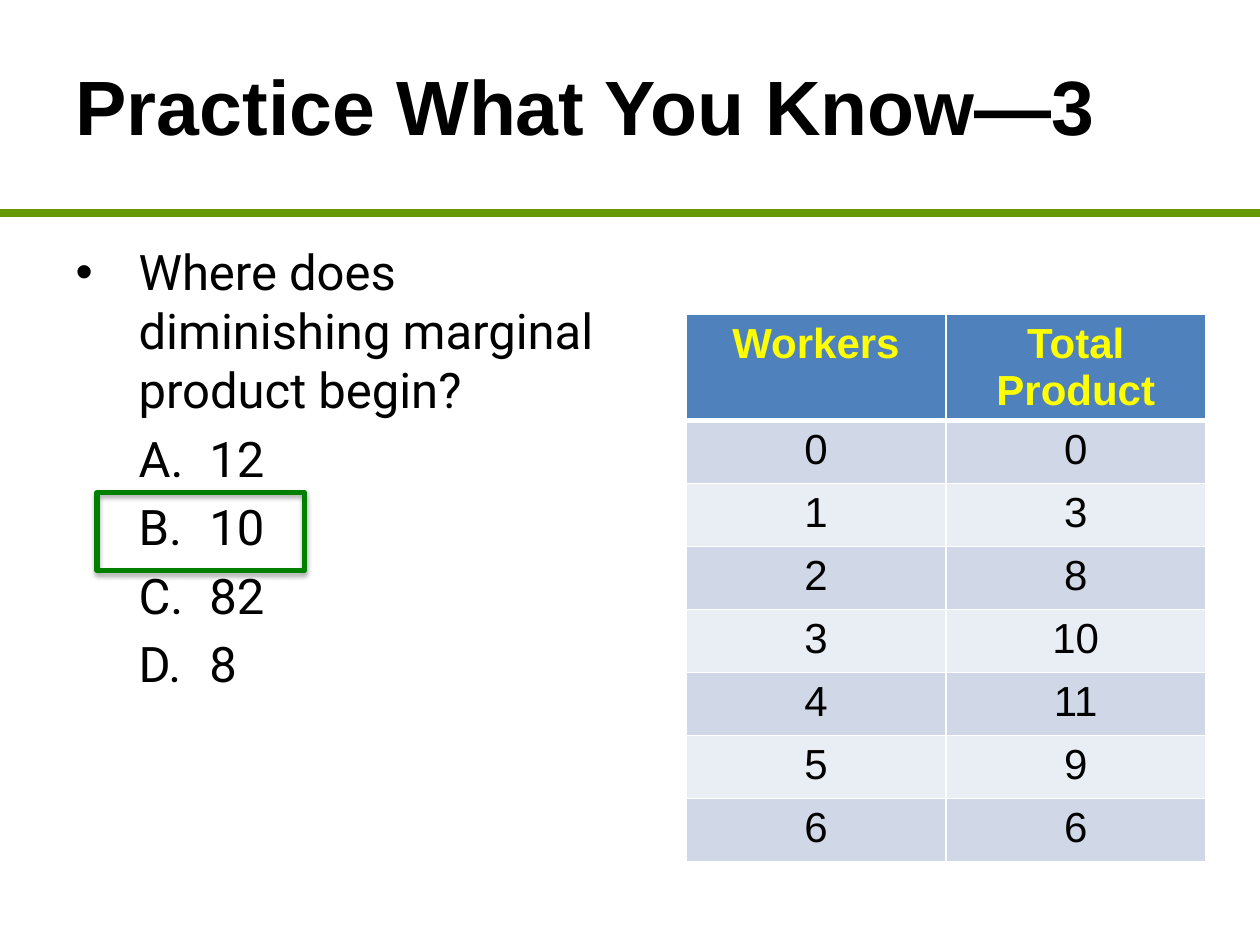
"""Build a practice-question slide with a multiple-choice list and a product table."""
from dataclasses import dataclass

from pptx import Presentation
from pptx.dml.color import RGBColor as RGB
from pptx.enum.shapes import MSO_CONNECTOR as CONN, MSO_SHAPE as SHAPE
from pptx.enum.text import MSO_ANCHOR as ANCHOR, MSO_AUTO_SIZE as FIT, PP_ALIGN as ALIGN
from pptx.oxml.ns import qn
from pptx.util import Pt
from lxml.etree import SubElement


@dataclass(frozen=True)
class Theme:
    heading_font: str = "Arial"
    body_font: str = "Roboto"
    title_size: int = 44
    body_size: int = 28
    table_size: int = 24
    text: str = "000000"
    rule: str = "669900"
    answer: str = "008000"
    header_fill: str = "4F81BD"
    header_text: str = "FFFF00"
    bands: tuple = ("D0D8E8", "E9EDF4")
    border: str = "FFFFFF"


THEME = Theme()
QUESTION = "Where does diminishing marginal product begin?"
CHOICES = ["12", "10", "82", "8"]
HEADERS = ("Workers", "Total Product")
TOTAL_PRODUCT = [0, 3, 8, 10, 11, 9, 6]


def place(sp, left, top, width, height):
    sp.left, sp.top, sp.width, sp.height = Pt(left), Pt(top), Pt(width), Pt(height)


def style(p, font, size, color, bold=False):
    for r in p.runs:
        r.font.name, r.font.size, r.font.bold = font, Pt(size), bold
        r.font.color.rgb = RGB.from_string(color)


def set_bullet(p, margin, hanging, tag, **attrs):
    pPr = p._p.get_or_add_pPr()
    pPr.set("marL", str(Pt(margin)))
    pPr.set("indent", str(-Pt(hanging)))
    SubElement(pPr, qn("a:buFont"), typeface=THEME.heading_font)
    SubElement(pPr, qn(tag), **attrs)


def add_title(s, text):
    title = s.shapes.title
    place(title, 36, 0, 648, 120)
    tf = title.text_frame
    tf.text = text
    tf.auto_size, tf.vertical_anchor = FIT.NONE, ANCHOR.MIDDLE
    p = tf.paragraphs[0]
    p.alignment = ALIGN.LEFT
    style(p, THEME.heading_font, THEME.title_size, THEME.text, bold=True)


def add_question(s, question, choices):
    body = s.placeholders[1]
    place(body, 36, 134.5, 341, 385)
    tf = body.text_frame
    tf.text = question
    tf.auto_size = FIT.NONE
    set_bullet(tf.paragraphs[0], 36, 36, "a:buChar", char="•")
    for choice in choices:
        p = tf.add_paragraph()
        p.text, p.level = choice, 1
        set_bullet(p, 76.5, 40.5, "a:buAutoNum", type="alphaUcPeriod")
    for p in tf.paragraphs:
        style(p, THEME.body_font, THEME.body_size, THEME.text)


def add_rule(s, y, width):
    line = s.shapes.add_connector(CONN.STRAIGHT, 0, Pt(y), width, Pt(y))
    line.line.color.rgb = RGB.from_string(THEME.rule)
    line.line.width = Pt(4.5)
    SubElement(line._element.spPr, qn("a:effectLst"))


def add_answer_frame(s, left, top, width, height):
    sp = s.shapes.add_shape(SHAPE.RECTANGLE, Pt(left), Pt(top), Pt(width), Pt(height))
    sp.fill.background()
    sp.line.color.rgb = RGB.from_string(THEME.answer)
    sp.line.width = Pt(3)
    sp.shadow.inherit = False
    effects = sp._element.spPr.find(qn("a:effectLst"))
    shadow = SubElement(effects, qn("a:outerShdw"), blurRad=str(Pt(3.1)),
                        dist=str(Pt(1.8)), dir="5400000", rotWithShape="0")
    color = SubElement(shadow, qn("a:srgbClr"), val=THEME.text)
    SubElement(color, qn("a:alpha"), val="35000")


def set_borders(cell, top, bottom):
    tcPr = cell._tc.get_or_add_tcPr()
    for side, width in (("L", 1), ("R", 1), ("T", top), ("B", bottom)):
        ln = SubElement(tcPr, qn(f"a:ln{side}"), w=str(Pt(width)))
        fill = SubElement(ln, qn("a:solidFill"))
        SubElement(fill, qn("a:srgbClr"), val=THEME.border)


def format_cell(cell, text, row):
    header = row == 0
    cell.text = str(text)
    set_borders(cell, top=3 if row == 1 else 1, bottom=3 if header else 1)
    cell.fill.solid()
    fill = THEME.header_fill if header else THEME.bands[(row - 1) % 2]
    cell.fill.fore_color.rgb = RGB.from_string(fill)
    p = cell.text_frame.paragraphs[0]
    p.alignment = ALIGN.CENTER
    color = THEME.header_text if header else THEME.text
    style(p, THEME.heading_font, THEME.table_size, color, bold=header)


def add_product_table(s, rows):
    header_height, row_height, col_width = 60.5, 36, 148.5
    height = header_height + row_height * (len(rows) - 1)
    frame = s.shapes.add_table(len(rows), len(rows[0]), Pt(392), Pt(179.5),
                               Pt(col_width * len(rows[0])), Pt(height))
    table = frame.table
    for col in table.columns:
        col.width = Pt(col_width)
    for i, values in enumerate(rows):
        table.rows[i].height = Pt(row_height if i else header_height)
        for j, value in enumerate(values):
            format_cell(table.cell(i, j), value, i)


def main():
    prs = Presentation()
    prs.slide_width, prs.slide_height = Pt(720), Pt(540)
    s = prs.slides.add_slide(prs.slide_layouts[1])
    add_rule(s, 121.5, prs.slide_width)
    add_title(s, "Practice What You Know—3")
    add_question(s, QUESTION, CHOICES)
    add_answer_frame(s, 55.5, 281.5, 118.5, 44.5)
    add_product_table(s, [HEADERS, *enumerate(TOTAL_PRODUCT)])
    prs.save("out.pptx")


if __name__ == "__main__":
    main()
